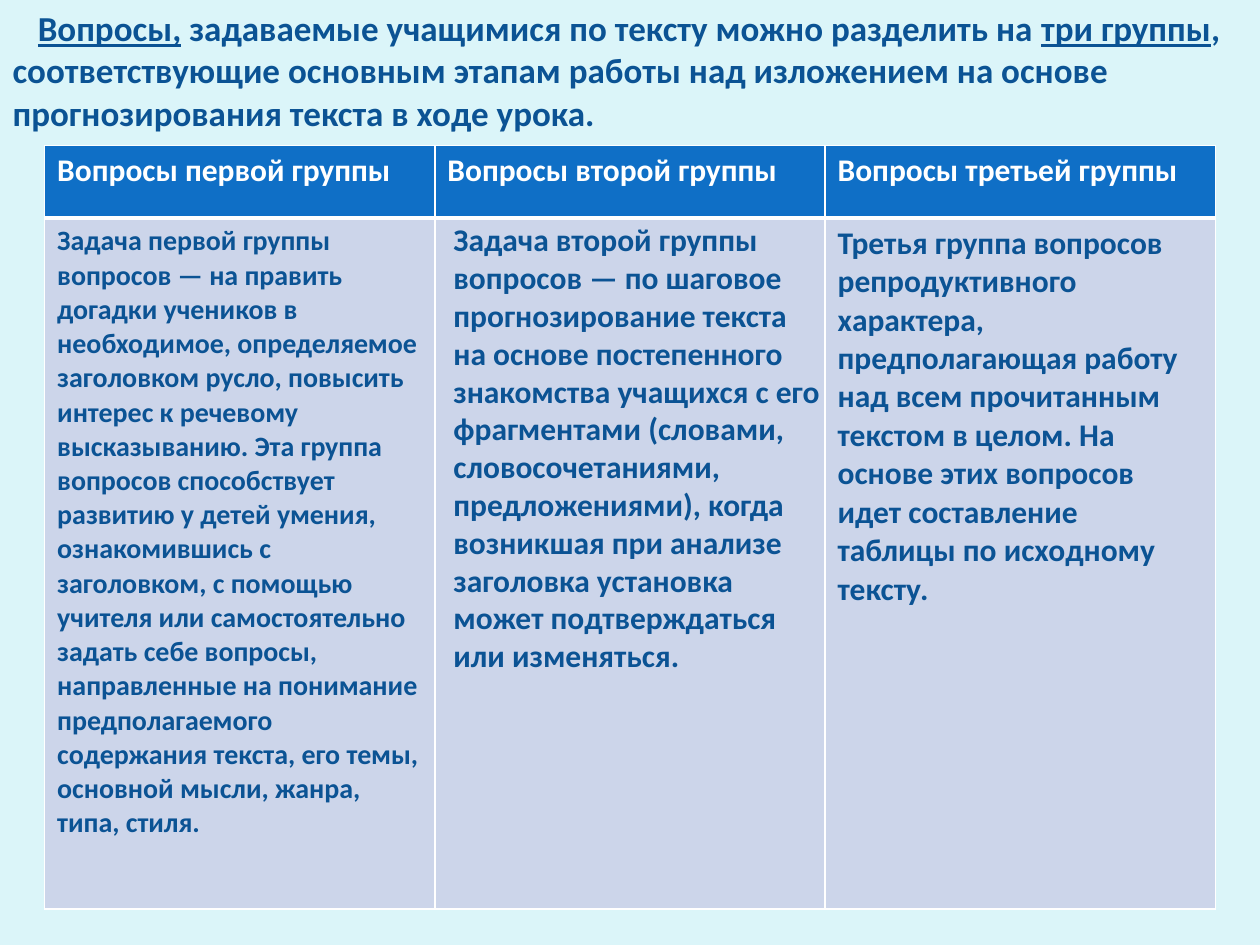
import pptx
import pptx.dml.color
import pptx.enum.text
import pptx.oxml.ns
import pptx.util
from lxml import etree

Pt = pptx.util.Pt
RGBColor = pptx.dml.color.RGBColor
qn = pptx.oxml.ns.qn

BACKGROUND = RGBColor(0xDB, 0xF5, 0xF9)
TEXT_BLUE = RGBColor(0x0B, 0x53, 0x94)
HEADER_BLUE = RGBColor(0x0F, 0x6F, 0xC6)
BODY_FILL = RGBColor(0xCC, 0xD5, 0xEA)
WHITE = RGBColor(0xFF, 0xFF, 0xFF)
FONT = "Calibri"

# Heading runs: text, underlined
HEADING = [
    ("Вопросы,", True),
    (" задаваемые учащимися по тексту можно разделить на ", False),
    ("три группы", True),
    (", соответствующие основным этапам работы над изложением на основе "
     "прогнозирования текста в ходе урока.", False),
]

FIRST_GROUP = (
    "Задача первой группы вопросов — на править догадки учеников в необходимое, "
    "определяемое заголовком русло, повысить интерес к речевому высказыванию. "
    "Эта группа вопросов способствует развитию у детей умения, ознакомившись с "
    "заголовком, с помощью учителя или самостоятельно задать себе вопросы, "
    "направленные на понимание предполагаемого содержания текста, его темы, "
    "основной мысли, жанра, типа, стиля."
)
SECOND_GROUP = (
    "Задача второй группы вопросов — по шаговое прогнозирование текста на основе "
    "постепенного знакомства учащихся с его фрагментами (словами, "
    "словосочетаниями, предложениями), когда возникшая при анализе заголовка "
    "установка может подтверждаться или изменяться."
)
THIRD_GROUP = (
    "Третья группа вопросов репродуктивного характера, предполагающая работу над "
    "всем прочитанным текстом в целом. На основе этих вопросов идет составление "
    "таблицы по исходному тексту."
)

# Table rows: height, fill, text colour, bottom border width, cells (text, size)
ROWS = [
    (41.5, HEADER_BLUE, WHITE, 3,
     [("Вопросы первой группы", 18), ("Вопросы второй группы", 18),
      ("Вопросы третьей группы", 18)]),
    (395, BODY_FILL, TEXT_BLUE, 1,
     [(FIRST_GROUP, 16), ("", 18), (THIRD_GROUP, 18)]),
]


def format_paragraph(paragraph, size, color):
    paragraph.alignment = pptx.enum.text.PP_ALIGN.LEFT
    font = paragraph.font
    font.name, font.size, font.bold = FONT, Pt(size), True
    font.color.rgb = color


def set_borders(cell, bottom_width, top_width):
    properties = cell._tc.get_or_add_tcPr()
    widths = {"a:lnL": 1, "a:lnR": 1, "a:lnT": top_width, "a:lnB": bottom_width}
    for index, (tag, width) in enumerate(widths.items()):
        line = etree.Element(qn(tag), w=str(Pt(width)))
        fill = etree.SubElement(line, qn("a:solidFill"))
        etree.SubElement(fill, qn("a:srgbClr"), val=str(WHITE))
        properties.insert(index, line)


def add_heading(slide, left, top, width, height):
    title = slide.shapes.title
    title.left, title.top = Pt(left), Pt(top)
    title.width, title.height = Pt(width), Pt(height)
    frame = title.text_frame
    frame.word_wrap = True
    frame.auto_size = pptx.enum.text.MSO_AUTO_SIZE.NONE
    frame.vertical_anchor = pptx.enum.text.MSO_ANCHOR.MIDDLE
    paragraph = frame.paragraphs[0]
    format_paragraph(paragraph, 20, TEXT_BLUE)
    paragraph._p.get_or_add_pPr().set("indent", str(Pt(14.4)))
    for text, underlined in HEADING:
        run = paragraph.add_run()
        run.text = text
        run.font.underline = underlined


def add_groups_table(slide, left, top, width, height):
    frame = slide.shapes.add_table(len(ROWS), 3, Pt(left), Pt(top), Pt(width), Pt(height))
    table = frame.table
    table.horz_banding = False
    top_border = 1
    for row_index, (row_height, fill, color, bottom_border, cells) in enumerate(ROWS):
        table.rows[row_index].height = Pt(row_height)
        for column_index, (text, size) in enumerate(cells):
            cell = table.cell(row_index, column_index)
            cell.text = text
            cell.fill.solid()
            cell.fill.fore_color.rgb = fill
            format_paragraph(cell.text_frame.paragraphs[0], size, color)
            set_borders(cell, bottom_border, top_border)
        top_border = bottom_border


def add_second_group_text(slide, left, top, width, height):
    box = slide.shapes.add_textbox(Pt(left), Pt(top), Pt(width), Pt(height))
    box.text_frame.word_wrap = True
    box.text_frame.text = SECOND_GROUP
    format_paragraph(box.text_frame.paragraphs[0], 18, TEXT_BLUE)


def main():
    presentation = pptx.Presentation()
    presentation.slide_width, presentation.slide_height = Pt(720), Pt(540)
    slide = presentation.slides.add_slide(presentation.slide_layouts[5])
    slide.background.fill.solid()
    slide.background.fill.fore_color.rgb = BACKGROUND

    add_heading(slide, 0, 0, 720, 80)
    add_groups_table(slide, 25.5, 83, 669, 436.5)
    # The middle column's text lies over its empty cell
    add_second_group_text(slide, 252, 122.4, 226.8, 269.3)
    presentation.save("out.pptx")


if __name__ == "__main__":
    main()
